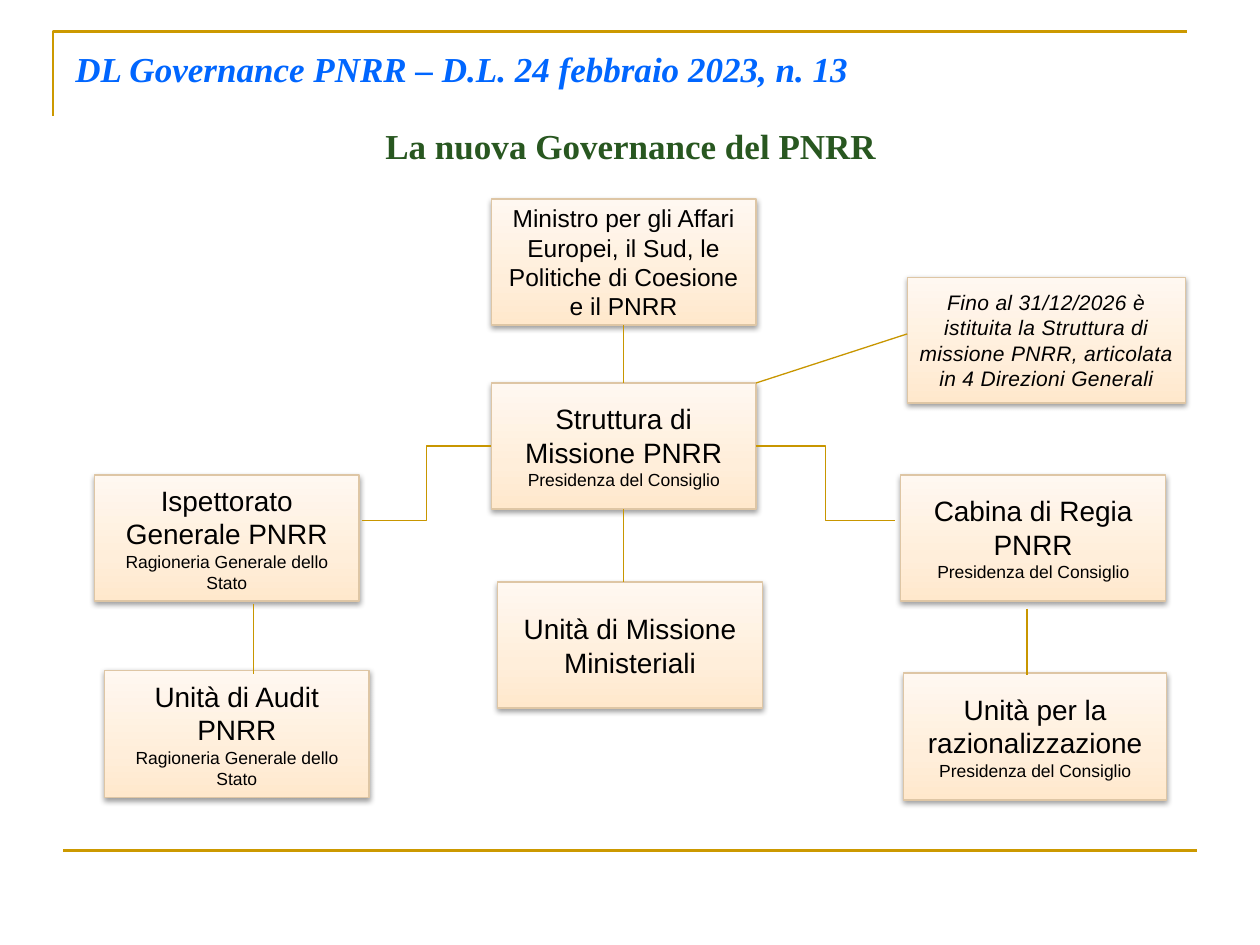
from lxml import etree
from pptx import Presentation
from pptx.dml.color import RGBColor
from pptx.enum.shapes import MSO_CONNECTOR, MSO_SHAPE
from pptx.enum.text import MSO_ANCHOR, PP_ALIGN
from pptx.oxml import parse_xml
from pptx.oxml.ns import qn
from pptx.util import Inches, Pt

STRAIGHT, ELBOW = MSO_CONNECTOR.STRAIGHT, MSO_CONNECTOR.ELBOW
RECT = MSO_SHAPE.RECTANGLE
TOP, MIDDLE = MSO_ANCHOR.TOP, MSO_ANCHOR.MIDDLE
LEFT, CENTER = PP_ALIGN.LEFT, PP_ALIGN.CENTER
NS = 'xmlns:a="http://schemas.openxmlformats.org/drawingml/2006/main"'
COLS, ROWS = 100, 75
BOX_W, BOX_H = 21, 10
RULE, LINK, EDGE = "CC9900", "C89600", "DEC6A5"
STOPS = ((0, "FFE8CC"), (35, "FFEEDA"), (100, "FFF8F1"))


def color(value):
    """Turn a hex string into a colour."""
    return RGBColor.from_string(value)


class Deck:
    """Style and current slide, measured in a grid of 100 by 75 cells."""

    def __init__(self):
        """Start a presentation with one blank slide."""
        self.prs = Presentation()
        self.prs.slide_width, self.prs.slide_height = Inches(10), Inches(7.5)
        self.s = self.prs.slides.add_slide(self.prs.slide_layouts[6])

    def place(self, *cells):
        """Turn alternating columns and rows into lengths."""
        units = self.prs.slide_width / COLS, self.prs.slide_height / ROWS
        return [round(c * units[i % 2]) for i, c in enumerate(cells)]

    def fill_text(self, tf, lines, font, ink, align, bold=False, italic=False):
        """Fill a text frame with (text, size) paragraphs."""
        tf.word_wrap = True
        for i, (text, size) in enumerate(lines):
            p = tf.paragraphs[0] if i == 0 else tf.add_paragraph()
            p.text, p.alignment = text, align
            f = p.runs[0].font
            f.name, f.size, f.bold, f.italic = font, Pt(size), bold, italic
            f.color.rgb = color(ink)

    def heading(self, cells, text, ink, italic=False):
        """Add a bold serif heading."""
        tf = self.s.shapes.add_textbox(*self.place(*cells)).text_frame
        tf.vertical_anchor = TOP
        self.fill_text(tf, [(text, 20)], "Times New Roman", ink, LEFT, True, italic)

    def frame(self, points):
        """Add an open outline through the points."""
        pts = [self.place(*pt) for pt in points]
        fb = self.s.shapes.build_freeform(*pts[0])
        fb.add_line_segments(pts[1:], close=False)
        sp = fb.convert_to_shape()
        sp.fill.background()
        sp.line.color.rgb, sp.line.width = color(RULE), Pt(1.5)
        sp.shadow.inherit = False

    def box(self, col, row, lines, w=BOX_W, h=BOX_H, italic=False, spacing=0):
        """Add a shaded box with centred text."""
        sp = self.s.shapes.add_shape(RECT, *self.place(col, row, w, h))
        stops = "".join(f'<a:gs pos="{pos * 1000}"><a:srgbClr val="{c}"/></a:gs>'
                        for pos, c in STOPS)
        spPr = sp._element.spPr
        spPr.append(parse_xml(f'<a:gradFill {NS} rotWithShape="1"><a:gsLst>{stops}'
                              '</a:gsLst><a:lin ang="16200000" scaled="1"/></a:gradFill>'))
        sp.line.color.rgb, sp.line.width = color(EDGE), Pt(0.75)
        sp.shadow.inherit = False
        spPr.find(qn("a:effectLst")).append(parse_xml(
            f'<a:outerShdw {NS} blurRad="40000" dist="20000" dir="5400000" rotWithShape="0">'
            '<a:srgbClr val="000000"><a:alpha val="38000"/></a:srgbClr></a:outerShdw>'))
        tf = sp.text_frame
        tf.vertical_anchor = MIDDLE
        tf.margin_left = tf.margin_right = Inches(0.09)
        self.fill_text(tf, lines, "Arial", "000000", CENTER, italic=italic)
        if spacing:
            for p in tf.paragraphs:
                p.runs[0]._r.get_or_add_rPr().set("spc", str(spacing))

    def link(self, cells, kind=STRAIGHT, ink=LINK, width=0.75):
        """Connect two points with a line."""
        cx = self.s.shapes.add_connector(kind, *self.place(*cells))
        cx.line.color.rgb, cx.line.width = color(ink), Pt(width)
        etree.SubElement(cx._element.spPr, qn("a:effectLst"))


def main():
    """Build the governance chart."""
    deck = Deck()
    deck.frame([(4.2, 9.2), (4.2, 2.5), (94.2, 2.5)])
    deck.link((5, 67.5, 95, 67.5), ink=RULE, width=1.5)
    deck.heading((5, 3.3, 90, 6.1), "DL Governance PNRR – D.L. 24 febbraio 2023, n. 13",
                 "0066FF", italic=True)
    deck.heading((29.6, 9.4, 42.5, 4.4), "La nuova Governance del PNRR", "285720")

    council = ("Presidenza del Consiglio", 10)
    accounts = ("Ragioneria Generale dello Stato", 10)
    deck.box(39, 30.4, [("Struttura di Missione PNRR", 16), council])
    deck.box(39, 15.8, [("Ministro per gli Affari Europei, il Sud, "
                         "le Politiche di Coesione e il PNRR", 14)])
    deck.box(39.5, 46.2, [("Unità di Missione Ministeriali", 16)])
    deck.box(7.5, 37.7, [("Ispettorato Generale PNRR", 16), accounts])
    deck.box(71.5, 37.7, [("Cabina di Regia PNRR", 16), council])
    deck.box(8.3, 53.2, [("Unità di Audit PNRR", 16), accounts], h=10.1)
    deck.box(71.7, 53.4, [("Unità per la razionalizzazione", 16), council],
             w=20.9, h=10.1)
    deck.box(72, 22, [("Fino al 31/12/2026 è istituita la Struttura di missione PNRR, "
                       "articolata in 4 Direzioni Generali", 12)],
             w=22.1, italic=True, spacing=20)

    for col, top, bottom in ((49.5, 25.8, 30.4), (49.5, 40.4, 46.2),
                             (81.5, 48.3, 53.6), (20.1, 47.9, 53.5)):
        deck.link((col, top, col, bottom))
    deck.link((28.7, 41.3, 39, 35.4), ELBOW)
    deck.link((60, 35.4, 71, 41.3), ELBOW)
    deck.link((72, 26.5, 60, 30.4))
    deck.prs.save("out.pptx")


if __name__ == "__main__":
    main()
